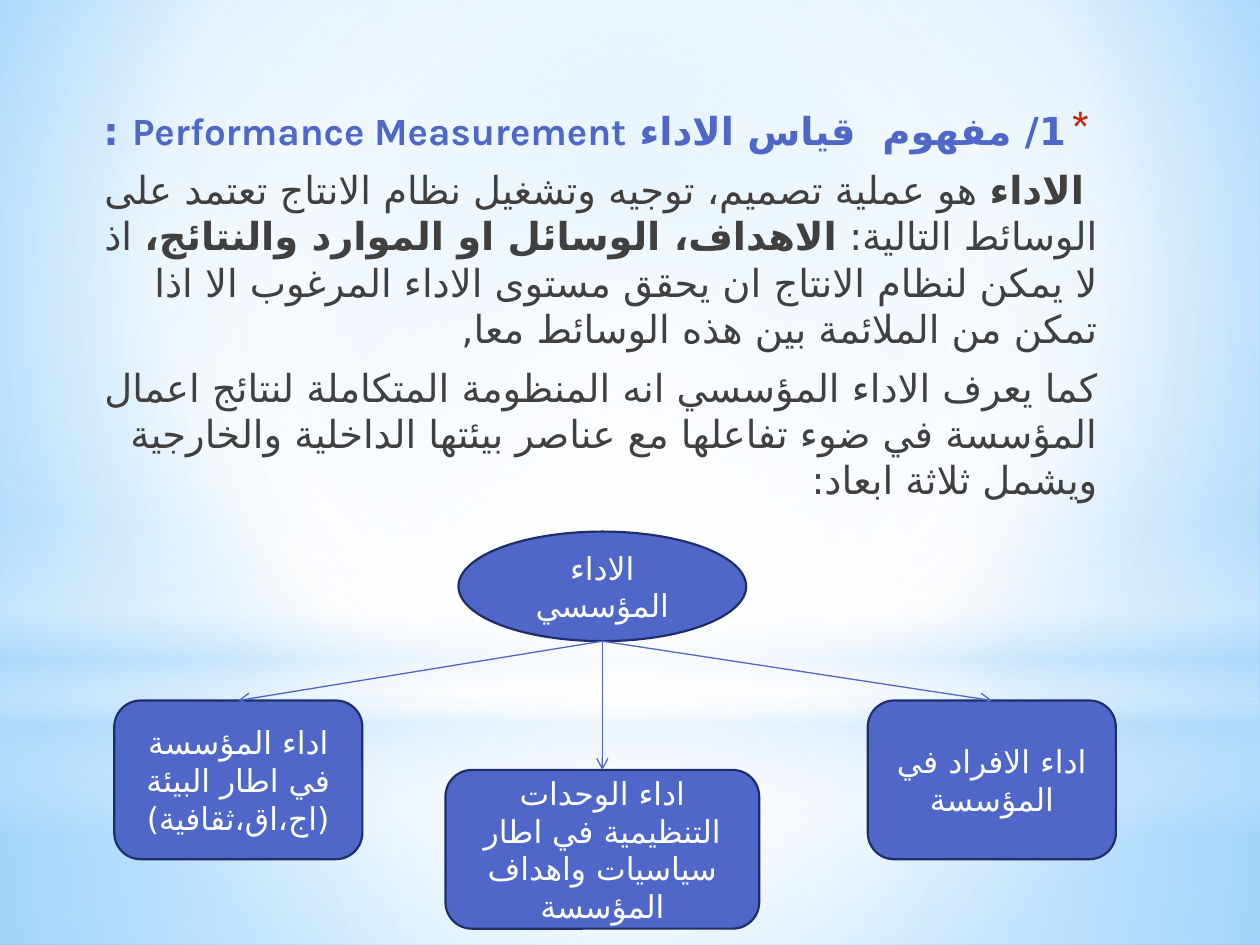
"""Build the slide on measuring performance and its three dimensions."""
from dataclasses import dataclass
from typing import Optional

from lxml import etree
from pptx import Presentation
from pptx import util as u
from pptx.dml import color, fill as fills
from pptx.enum import shapes, text
from pptx.oxml import ns

Pt = u.Pt
FONT, ARABIC_FONT = "Karla", "DejaVu Sans"
COLORS = {"blue": "4E67C8", "navy": "1F2E69", "white": "FFFFFF", "ink": "404040",
          "red": "C3260C", "sky": "B4DCFA", "halo": "9ED5FF", "edge": "5BB9FF"}
CENTER = (50, 50, 50, 50)


@dataclass
class Gradient:
    """Stops of position, colour and opacity; a focus rectangle, or none if linear."""
    stops: list[tuple[int, str, int]]
    focus: Optional[tuple[int, int, int, int]] = CENTER


@dataclass
class Glow:
    """A soft full-width layer of the backdrop."""
    outline: shapes.MSO_SHAPE
    top: float
    height: float
    gradient: Gradient


@dataclass
class Node:
    """A labelled shape of the diagram, placed by its centre and top."""
    label: str
    center: float
    top: float
    width: float
    height: float = 90.7
    outline: shapes.MSO_SHAPE = shapes.MSO_SHAPE.ROUNDED_RECTANGLE


@dataclass
class Passage:
    """A right-to-left paragraph made of pieces of text and their weight."""
    pieces: list[tuple[str, bool]]
    color: str = "ink"
    size: float = 22
    align: text.PP_ALIGN = text.PP_ALIGN.RIGHT
    margin: float = 3.6
    hanging: float = 0
    bullet: Optional[str] = None


BACKDROP = Gradient([(0, "halo", 100), (60, "white", 100), (100, "edge", 100)], (20, 10, 20, 60))
RECT, OVAL = shapes.MSO_SHAPE.RECTANGLE, shapes.MSO_SHAPE.OVAL
GLOWS = [
    Glow(RECT, 401.8, 138.2, Gradient([(0, "white", 91), (37, "white", 76), (100, "sky", 79)])),
    Glow(RECT, 0, 401.8, Gradient([(0, "white", 89), (48, "white", 62), (100, "sky", 79)])),
    Glow(RECT, 296.6, 180, Gradient([(0, "white", 0), (29, "white", 30), (45, "sky", 40),
                                     (55, "white", 26), (65, "sky", 60), (100, "white", 0)], None)),
    Glow(OVAL, 126, 401.8, Gradient([(0, "white", 100), (56, "white", 0)])),
]
PASSAGES = [
    Passage([("1/ مفهوم  قياس الاداء Performance Measurement :", True)], "blue",
            align=text.PP_ALIGN.CENTER, margin=18, hanging=-14.4, bullet="*"),
    Passage([(" الاداء", True),
             (" هو عملية تصميم، توجيه وتشغيل نظام الانتاج تعتمد على الوسائط التالية: ", False),
             ("الاهداف، الوسائل او الموارد والنتائج،", True),
             (" اذ لا يمكن لنظام الانتاج ان يحقق مستوى الاداء المرغوب الا اذا تمكن من "
              "الملائمة بين هذه الوسائط معا,", False)]),
    Passage([("كما يعرف الاداء المؤسسي انه المنظومة المتكاملة لنتائج اعمال المؤسسة في ضوء "
              "تفاعلها مع عناصر بيئتها الداخلية والخارجية ويشمل ثلاثة ابعاد:", False)]),
]
INSTITUTION = Node("الاداء المؤسسي", 344.2, 303.8, 164.4, 62.6, OVAL)
DIMENSIONS = [
    Node("اداء المؤسسة في اطار البيئة (اج،اق،ثقافية)", 136.2, 400.3, 141.8),
    Node("اداء الافراد في المؤسسة", 566.8, 400.3, 141.8),
    Node("اداء الوحدات التنظيمية في اطار سياسيات واهداف المؤسسة", 344.2, 440, 179.3),
]


def rgb(name: str) -> color.RGBColor:
    """Look up a named colour."""
    return color.RGBColor.from_string(COLORS[name])


def add_child(parent, tag: str, **attributes):
    """Append a child element with the given attributes."""
    return etree.SubElement(parent, ns.qn(tag), {k: str(v) for k, v in attributes.items()})


def paint(fill: fills.FillFormat, holder, gradient: Gradient) -> None:
    """Give the holder of a fill a gradient."""
    fill.background()
    blank = holder.find(ns.qn("a:noFill"))
    grad = etree.Element(ns.qn("a:gradFill"), rotWithShape="1")
    stop_list = add_child(grad, "a:gsLst")
    for position, name, opacity in gradient.stops:
        stop = add_child(stop_list, "a:gs", pos=position * 1000)
        tint = add_child(stop, "a:srgbClr", val=COLORS[name])
        if opacity < 100:
            add_child(tint, "a:alpha", val=opacity * 1000)
    if gradient.focus:
        radial = add_child(grad, "a:path", path="circle")
        sides = {side: share * 1000 for side, share in zip("ltrb", gradient.focus)}
        add_child(radial, "a:fillToRect", **sides)
    else:
        add_child(grad, "a:lin", ang=90 * 60000, scaled=0)
    holder.replace(blank, grad)


def style_run(run, size: float, name: str, bold: bool = False) -> None:
    """Set the look of a run for both Latin and Arabic letters."""
    run.font.size, run.font.bold, run.font.name = Pt(size), bold, FONT
    run.font.color.rgb = rgb(name)
    add_child(run.font._element, "a:cs", typeface=ARABIC_FONT)


def draw_glow(slide, glow: Glow, depth: int) -> None:
    """Draw one layer of the backdrop and set it at its depth in the slide master."""
    layer = slide.shapes.add_shape(glow.outline, 0, Pt(glow.top), Pt(720), Pt(glow.height))
    layer.shadow.inherit = False
    layer.line.fill.background()
    paint(layer.fill, layer.element.spPr, glow.gradient)
    layer.element.nvSpPr.cNvPr.set("id", str(100 + depth))
    slide.slide_layout.slide_master.shapes.element.insert(2 + depth, layer.element)


def write_passage(paragraph, passage: Passage, first: bool) -> None:
    """Fill a paragraph of the body."""
    properties = paragraph._p.get_or_add_pPr()
    properties.set("rtl", "1")
    properties.set("marL", str(Pt(passage.margin)))
    properties.set("indent", str(Pt(passage.hanging)))
    if passage.bullet:
        add_child(add_child(properties, "a:buClr"), "a:srgbClr", val=COLORS["red"])
        add_child(properties, "a:buSzPct", val=130000)
        add_child(properties, "a:buFont", typeface=FONT)
        add_child(properties, "a:buChar", char=passage.bullet)
    else:
        add_child(properties, "a:buNone")
    paragraph.alignment = passage.align
    paragraph.space_before = Pt(0 if first else 4.4)
    paragraph.space_after = Pt(3)
    for words, bold in passage.pieces:
        run = paragraph.add_run()
        run.text = words
        style_run(run, passage.size, passage.color, bold)


def draw_node(slide, node: Node):
    """Draw a labelled shape and return it."""
    shape = slide.shapes.add_shape(node.outline, Pt(node.center - node.width / 2), Pt(node.top),
                                   Pt(node.width), Pt(node.height))
    shape.shadow.inherit = False
    shape.fill.solid()
    shape.fill.fore_color.rgb = rgb("blue")
    shape.line.color.rgb = rgb("navy")
    shape.line.width = Pt(1.25)
    frame = shape.text_frame
    frame.word_wrap = True
    frame.vertical_anchor = text.MSO_ANCHOR.MIDDLE
    frame.text = node.label
    frame.paragraphs[0].alignment = text.PP_ALIGN.CENTER
    style_run(frame.paragraphs[0].runs[0], 18, "white")
    return shape


def draw_arrow(slide, source: Node, target) -> None:
    """Join the foot of the source to the top of the target."""
    x, y = Pt(source.center), Pt(source.top + source.height)
    arrow = slide.shapes.add_connector(shapes.MSO_CONNECTOR.STRAIGHT, x, y, x, y)
    arrow.end_connect(target, 0)
    arrow.line.color.rgb = rgb("blue")
    arrow.line.width = Pt(0.75)
    add_child(arrow.line._get_or_add_ln(), "a:tailEnd", type="arrow")
    add_child(arrow._element.spPr, "a:effectLst")


def main() -> None:
    """Build and save the slide."""
    deck = Presentation()
    deck.slide_width, deck.slide_height = Pt(720), Pt(540)
    slide = deck.slides.add_slide(deck.slide_layouts[1])
    title, body = slide.placeholders
    title.element.getparent().remove(title.element)
    backdrop = slide.background.fill
    backdrop.background()
    paint(backdrop, slide.element.find(".//" + ns.qn("p:bgPr")), BACKDROP)
    for depth, glow in enumerate(GLOWS):
        draw_glow(slide, glow, depth)
    body.left, body.top, body.width, body.height = Pt(48.2), Pt(57.6), Pt(589.7), Pt(439.2)
    frame = body.text_frame
    frame.auto_size = text.MSO_AUTO_SIZE.NONE
    for index, passage in enumerate(PASSAGES):
        paragraph = frame.add_paragraph() if index else frame.paragraphs[0]
        write_passage(paragraph, passage, index == 0)
    draw_node(slide, INSTITUTION)
    for box in [draw_node(slide, dimension) for dimension in DIMENSIONS]:
        draw_arrow(slide, INSTITUTION, box)
    deck.save("out.pptx")


if __name__ == "__main__":
    main()
